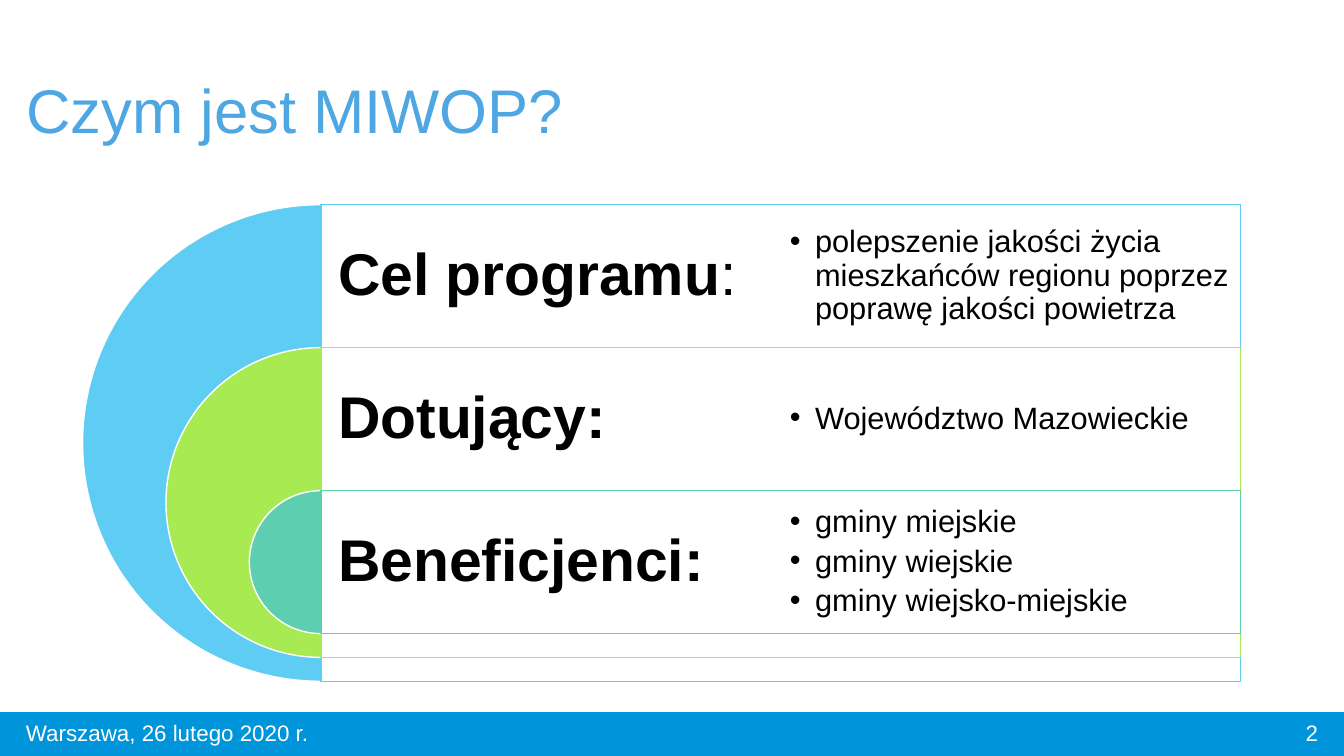
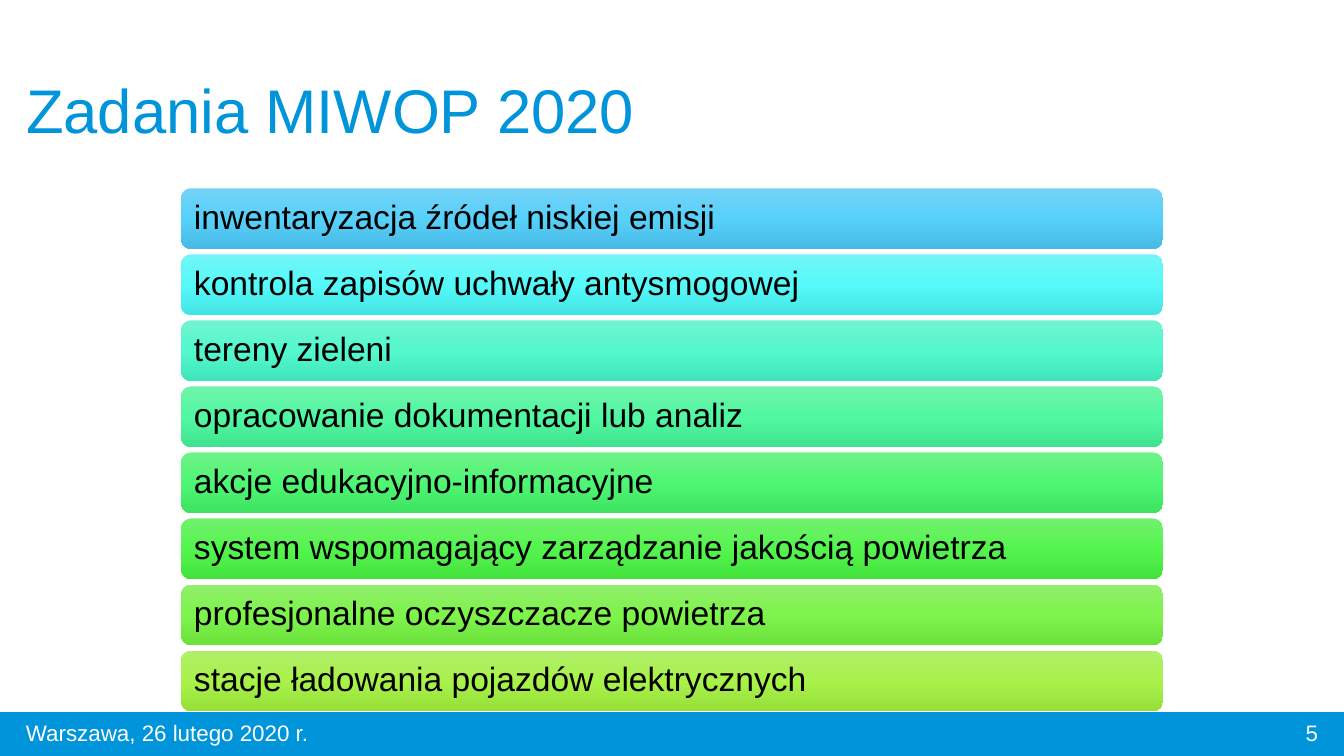
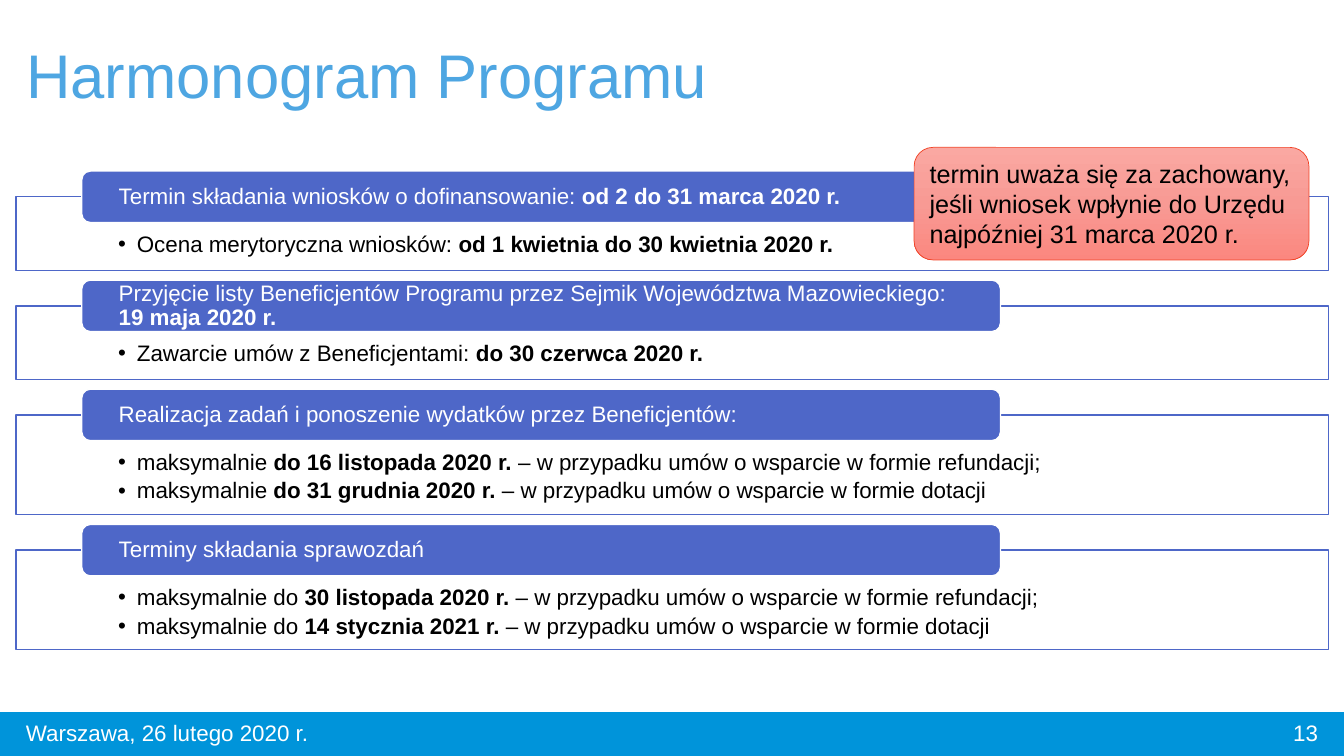
from collections import namedtuple

from lxml import etree
from pptx import Presentation
from pptx import util as u
from pptx.dml.color import RGBColor
from pptx.enum import shapes, text
from pptx.oxml import ns

Box = namedtuple("Box", "left top width height")
Style = namedtuple("Style", "size color spacing bold", defaults=(0.9, None))

FONT = "Arial"
BLUE = RGBColor(0x00, 0x94, 0xDA)
SOFT_BLUE = RGBColor(0x4E, 0xA6, 0xE2)
INDIGO = RGBColor(0x4E, 0x67, 0xC8)
WHITE = RGBColor(0xFF, 0xFF, 0xFF)
BLACK = RGBColor(0x00, 0x00, 0x00)
SKY = RGBColor(0x5E, 0xCC, 0xF3)
LIME = RGBColor(0xA7, 0xEA, 0x52)
TEAL = RGBColor(0x5D, 0xCE, 0xAF)
RED = RGBColor(0xF1, 0x41, 0x24)
CORAL_STOPS = ("FAA8A2", "F89A94", "FB877F")

PAGE = Box(0, 0, 960, 540)
TITLE = Box(11.5, 28.8, 721.4, 104.4)
FOOTER = Box(0, 509, 960, 31)

RINGS = [
    (SKY, ("", "Cel programu", ":"),
     [("polepszenie jakości życia mieszkańców regionu poprzez poprawę jakości powietrza",)]),
    (LIME, ("", "Dotujący:"), [("Województwo Mazowieckie",)]),
    (TEAL, ("", "Beneficjenci:"),
     [("gminy miejskie",), ("gminy wiejskie",), ("gminy wiejsko-miejskie",)]),
]

TASKS = [
    ("inwentaryzacja źródeł niskiej emisji", ("74D2F6", "57D0FA", "47BBE5")),
    ("kontrola zapisów uchwały antysmogowej", ("73F5F5", "55F9F9", "44E5E5")),
    ("tereny zieleni", ("72F4D0", "53F8CD", "41E5BB")),
    ("opracowanie dokumentacji lub analiz", ("70F3AC", "51F7A1", "3FE48F")),
    ("akcje edukacyjno-informacyjne", ("6FF289", "4FF674", "3EE362")),
    ("system wspomagający zarządzanie jakością powietrza", ("72F16E", "54F44E", "43E23C")),
    ("profesjonalne oczyszczacze powietrza", ("90EF6C", "7EF34C", "6CE13B")),
    ("stacje ładowania pojazdów elektrycznych", ("B1EE6B", "A8F24A", "96E039")),
]

REFUND = "– w przypadku umów o wsparcie w formie refundacji;"
GRANT = "– w przypadku umów o wsparcie w formie dotacji"
STAGES = [
    (("Termin składania wniosków o dofinansowanie: ", "od 2 do 31 marca 2020 r."),
     [("Ocena merytoryczna wniosków: ", "od 1 kwietnia do 30 kwietnia 2020 r.")]),
    (("Przyjęcie listy Beneficjentów Programu przez Sejmik Województwa Mazowieckiego: ",
      "\n19 maja 2020 r."),
     [("Zawarcie umów z Beneficjentami: ", "do 30 czerwca 2020 r.")]),
    (("Realizacja zadań i ponoszenie wydatków przez Beneficjentów:",),
     [("maksymalnie ", "do 16 listopada 2020 r. ", REFUND),
      ("maksymalnie", " do 31 grudnia 2020 r. ", GRANT)]),
    (("Terminy składania sprawozdań",),
     [("maksymalnie do ", "30 listopada 2020 r. ", REFUND),
      ("maksymalnie do ", "14 stycznia 2021 r. ", GRANT)]),
]


def place(box):
    """Convert a box in points to lengths."""
    return [u.Pt(round(value, 2)) for value in box]


def add_bullet(paragraph, indent):
    """Give a paragraph a hanging bullet."""
    properties = paragraph._p.get_or_add_pPr()
    properties.set("marL", str(u.Pt(indent)))
    properties.set("indent", str(-u.Pt(indent)))
    etree.SubElement(properties, ns.qn("a:buFont"), typeface=FONT)
    etree.SubElement(properties, ns.qn("a:buChar"), char="•")


def write(shape, lines, style, insets=(7.2, 3.6, 7.2, 3.6), anchor=text.MSO_ANCHOR.MIDDLE,
          align=text.PP_ALIGN.LEFT, indent=0):
    """Fill a shape with lines, each a tuple of alternating plain and bold runs."""
    frame = shape.text_frame
    frame.word_wrap = True
    frame.vertical_anchor = anchor
    frame.margin_left, frame.margin_top, frame.margin_right, frame.margin_bottom = place(insets)
    for number, runs in enumerate(lines):
        paragraph = frame.add_paragraph() if number else frame.paragraphs[0]
        if indent:
            add_bullet(paragraph, indent)
        paragraph.alignment = align
        paragraph.line_spacing = style.spacing
        if number:
            paragraph.space_before = u.Pt(round(style.size * 0.19, 1))
        paragraph.font.name = FONT
        paragraph.font.size = u.Pt(style.size)
        paragraph.font.color.rgb = style.color
        for position, words in enumerate(runs):
            if words.startswith("\n"):
                paragraph.add_line_break()
            if words:
                run = paragraph.add_run()
                run.text = words.lstrip("\n")
                run.font.bold = position % 2 == 1


def add_text(slide, box, lines, style, **options):
    """Add a text box."""
    write(slide.shapes.add_textbox(*place(box)), lines, style, **options)


def add_block(slide, kind, box, fill=None, line=None, width=1, opacity=100):
    """Add a preset shape with a solid fill and an optional outline."""
    shape = slide.shapes.add_shape(kind, *place(box))
    shape.shadow.inherit = False
    if fill is not None:
        shape.fill.solid()
        shape.fill.fore_color.rgb = fill
    if opacity < 100:
        color = shape._element.spPr.find(ns.qn("a:solidFill"))[0]
        etree.SubElement(color, ns.qn("a:alpha"), val=str(opacity * 1000))
    if line is None:
        shape.line.fill.background()
    else:
        shape.line.color.rgb = line
        shape.line.width = u.Pt(width)
    return shape


def shade(shape, stops):
    """Fill a shape with an even gradient from top to bottom."""
    shape.fill.gradient()
    shape.fill.gradient_angle = 270
    stop_list = shape._element.spPr.find(".//" + ns.qn("a:gsLst"))
    for stop in list(stop_list):
        stop_list.remove(stop)
    for number, color in enumerate(stops):
        position = number * 100000 // (len(stops) - 1)
        stop = etree.SubElement(stop_list, ns.qn("a:gs"), pos=str(position))
        etree.SubElement(stop, ns.qn("a:srgbClr"), val=color)


def add_page(presentation, title, number, color, anchor=text.MSO_ANCHOR.MIDDLE):
    """Add a slide with its title, footer band, date and number."""
    slide = presentation.slides.add_slide(presentation.slide_layouts[6])
    add_block(slide, shapes.MSO_SHAPE.RECTANGLE, FOOTER, BLUE, BLUE)
    add_text(slide, TITLE, [(title,)], Style(44, color), anchor=anchor)
    small = Style(16, WHITE, 1)
    label = Box(TITLE.left, FOOTER.top, 288, 28.8)
    add_text(slide, label, [("Warszawa, 26 lutego 2020 r.",)], small)
    label = label._replace(left=PAGE.width - TITLE.left - 216, width=216)
    add_text(slide, label, [(str(number),)], small, align=text.PP_ALIGN.RIGHT)
    return slide


def add_rings(slide, box):
    """Draw nested half circles, each with a heading and bullets beside it."""
    axis = box.left + box.height / 2
    band_width = box.left + box.width - axis
    row = box.height * 0.3
    for number, (color, heading, points) in enumerate(RINGS):
        top = box.top + number * row
        size = box.height * (1 - 0.35 * number)
        half = add_block(slide, shapes.MSO_SHAPE.PIE, Box(axis - size / 2, top, size, size),
                         color, WHITE)
        half.adjustments[0] = 54
        half.adjustments[1] = 162
        add_block(slide, shapes.MSO_SHAPE.RECTANGLE, Box(axis, top, band_width, size),
                  WHITE, color, opacity=90)
        cell = Box(axis, top, band_width / 2, row)
        add_text(slide, cell, [heading], Style(42, BLACK), insets=[12.3] * 4)
        add_text(slide, cell._replace(left=axis + cell.width), points, Style(22, BLACK),
                 insets=[6.6] * 4, indent=18)


def add_tasks(slide, box):
    """Stack one shaded bar for each task over the height of the box."""
    gap = 3.9
    height = (box.height + gap) / len(TASKS) - gap
    for number, (task, stops) in enumerate(TASKS):
        bar = add_block(slide, shapes.MSO_SHAPE.ROUNDED_RECTANGLE,
                        Box(box.left, box.top + number * (height + gap), box.width, height))
        shade(bar, stops)
        write(bar, [(task,)], Style(24, BLACK))


def add_stages(slide, box):
    """Stack framed stages, each with a heading pill over its top edge."""
    top = box.top
    for heading, points in STAGES:
        height = 33.8 + 18.7 * len(points)
        frame = add_block(slide, shapes.MSO_SHAPE.RECTANGLE,
                          Box(box.left, top, box.width, height), WHITE, INDIGO, opacity=90)
        write(frame, points, Style(16, BLACK), insets=(72.8, 26, 72.8, 8.6),
              anchor=text.MSO_ANCHOR.TOP, indent=13.5)
        pill = add_block(slide, shapes.MSO_SHAPE.ROUNDED_RECTANGLE,
                         Box(box.left + box.width * 0.05, top - 18.4, box.width * 0.7, 36.8),
                         INDIGO, WHITE)
        write(pill, [heading], Style(16, WHITE), insets=(24.6, 0, 24.6, 0))
        top += height + 25.4


def add_callout(slide, box):
    """Add the shaded note about the deadline."""
    note = add_block(slide, shapes.MSO_SHAPE.ROUNDED_RECTANGLE, box, line=RED, width=0.5)
    shade(note, CORAL_STOPS)
    write(note, [("termin uważa się za zachowany, jeśli wniosek wpłynie do Urzędu "
                  "najpóźniej 31 marca 2020 r.",)], Style(18, BLACK, 1))


def main():
    """Build the three slides."""
    presentation = Presentation()
    presentation.slide_width = u.Pt(PAGE.width)
    presentation.slide_height = u.Pt(PAGE.height)

    slide = add_page(presentation, "Czym jest MIWOP?", 2, SOFT_BLUE)
    add_rings(slide, Box(59, 146.2, 827, 340.4))

    slide = add_page(presentation, "Zadania MIWOP 2020", 5, BLUE)
    add_tasks(slide, Box(129.4, 134.5, 701.3, 373.5))

    slide = add_page(presentation, "Harmonogram Programu", 13, SOFT_BLUE, text.MSO_ANCHOR.TOP)
    add_stages(slide, Box(11.5, 140.6, 937.5, 324))
    add_callout(slide, Box(653, 105.3, 282, 80.4))

    presentation.save("out.pptx")


if __name__ == "__main__":
    main()
